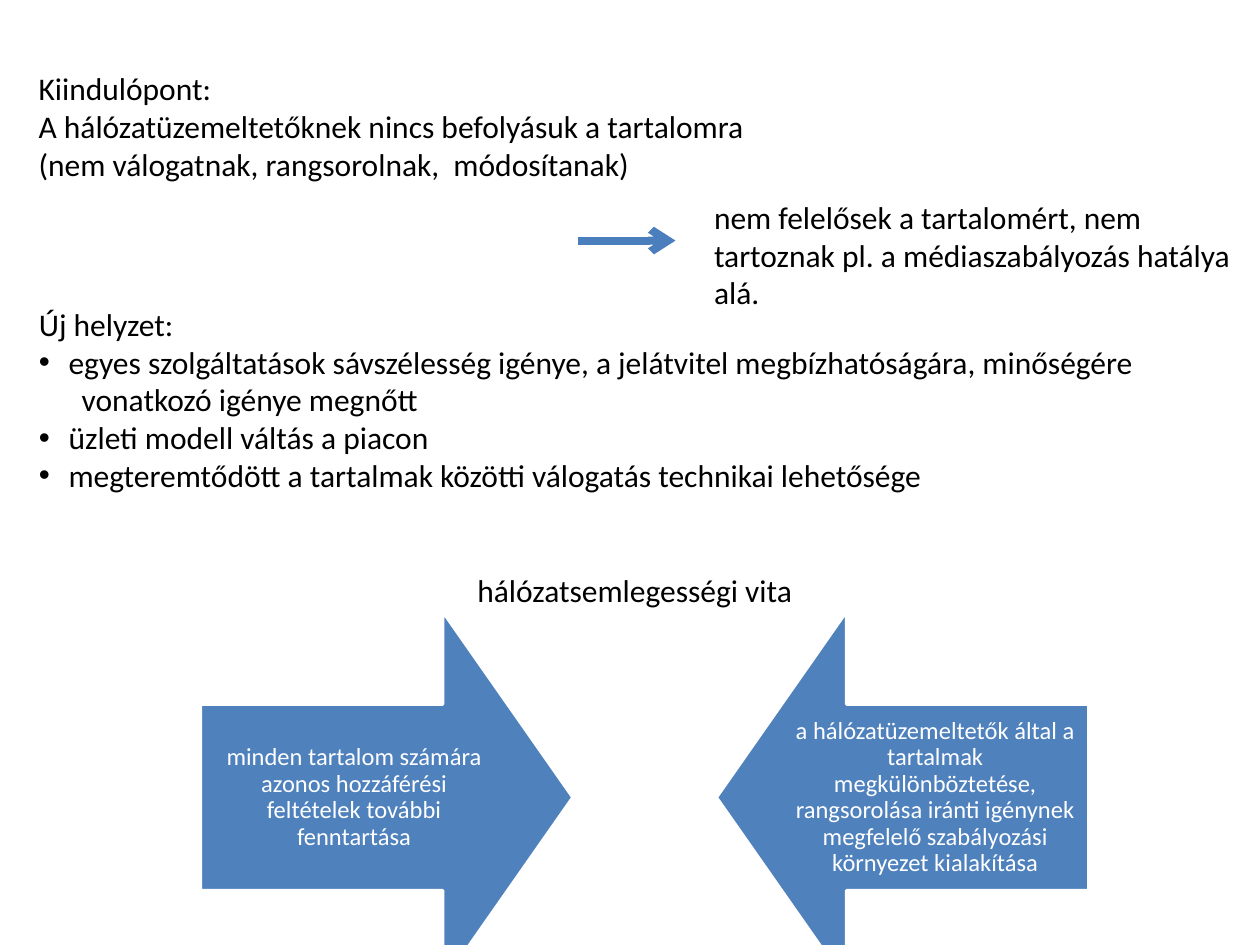
import pptx
import pptx.util
import pptx.dml.color
import pptx.enum.shapes
import pptx.enum.text
import pptx.oxml.ns
from lxml import etree

Pt = pptx.util.Pt
Kind = pptx.enum.shapes.MSO_SHAPE
Align = pptx.enum.text.PP_ALIGN
Mid = pptx.enum.text.MSO_ANCHOR.MIDDLE
qn = pptx.oxml.ns.qn

# Content
FONT = "Calibri"
HUES = {"text": "000000", "blue": "4F81BD", "link": "4B7EBC", "white": "FFFFFF"}
SLIDE = (720, 540)

# left, top, width, height, lines
NOTES = [
    (15, 36, 493, 73, ["Kiindulópont:",
                       "A hálózatüzemeltetőknek nincs befolyásuk a tartalomra",
                       "(nem válogatnak, rangsorolnak,  módosítanak)"]),
    (401, 109.5, 319, 73, ["nem felelősek a tartalomért, nem tartoznak pl. "
                           "a médiaszabályozás hatálya alá."]),
    (265.7, 323, 201, 29, ["hálózatsemlegességi vita"]),
]

# text, left margin, bullet
LIST_BOX = (15, 170.6, 660, 117)
LIST = [
    ("Új helyzet:", 0, False),
    ("egyes szolgáltatások sávszélesség igénye, a jelátvitel megbízhatóságára, "
     "minőségére", 17, True),
    ("vonatkozó igénye megnőtt", 24.5, False),
    ("üzleti modell váltás a piacon", 17, True),
    ("megteremtődött a tartalmak közötti válogatás technikai lehetősége", 17, True),
]

LINK = (330.5, 137.5, 386, 137.5)

SIDE, TOP = 213, 349.2
SIDES = [
    (Kind.RIGHT_ARROW, 114.5,
     "minden tartalom számára azonos hozzáférési feltételek további fenntartása"),
    (Kind.LEFT_ARROW, 409.3,
     "a hálózatüzemeltetők által a tartalmak megkülönböztetése, rangsorolása "
     "iránti igénynek megfelelő szabályozási környezet kialakítása"),
]


def tint(hue):
    return pptx.dml.color.RGBColor.from_string(HUES[hue])


def style(frame, size, hue):
    for para in frame.paragraphs:
        for run in para.runs:
            run.font.name = FONT
            run.font.size = Pt(size)
            run.font.color.rgb = tint(hue)


def place(shape, box):
    shape.left, shape.top, shape.width, shape.height = map(Pt, box)


def main():
    deck = pptx.Presentation()
    deck.slide_width, deck.slide_height = map(Pt, SLIDE)
    slide = deck.slides.add_slide(deck.slide_layouts[1])
    shapes = slide.shapes
    title = shapes.title
    title.element.getparent().remove(title.element)

    # Plain notes
    for *box, lines in NOTES:
        frame = shapes.add_textbox(*map(Pt, box)).text_frame
        frame.word_wrap = True
        frame.text = "\n".join(lines)
        style(frame, 18, "text")

    # Bulleted list
    body = slide.placeholders[1]
    place(body, LIST_BOX)
    frame = body.text_frame
    frame.auto_size = pptx.enum.text.MSO_AUTO_SIZE.NONE
    frame.text = "\n".join(text for text, *_ in LIST)
    for para, (_, left, dot) in zip(frame.paragraphs, LIST):
        para.space_before = Pt(0)
        props = para._p.get_or_add_pPr()
        props.set("marL", str(Pt(left)))
        props.set("indent", str(Pt(-left if dot else 0)))
        if dot:
            etree.SubElement(props, qn("a:buFont")).set("typeface", "Arial")
            etree.SubElement(props, qn("a:buChar")).set("char", "•")
        else:
            etree.SubElement(props, qn("a:buNone"))
    style(frame, 18, "text")

    # Arrow from premise to outcome
    link = shapes.add_connector(
        pptx.enum.shapes.MSO_CONNECTOR.STRAIGHT, *map(Pt, LINK))
    link.line.color.rgb = tint("link")
    link.line.width = Pt(4.5)
    etree.SubElement(link.line._get_or_add_ln(), qn("a:tailEnd")).set("type", "arrow")
    etree.SubElement(link._element.spPr, qn("a:effectLst"))

    # Opposing block arrows
    for kind, left, text in SIDES:
        block = shapes.add_shape(kind, *map(Pt, (left, TOP, SIDE, SIDE)))
        block.adjustments[0], block.adjustments[1] = 0.5, 0.35
        block.shadow.inherit = False
        block.fill.solid()
        block.fill.fore_color.rgb = tint("blue")
        block.line.color.rgb = tint("white")
        block.line.width = Pt(2)
        frame = block.text_frame
        frame.word_wrap = True
        frame.vertical_anchor = Mid
        frame.margin_left = frame.margin_right = Pt(8)
        frame.margin_top = frame.margin_bottom = Pt(8)
        frame.text = text
        frame.paragraphs[0].alignment = Align.CENTER
        frame.paragraphs[0].line_spacing = 0.9
        style(frame, 14, "white")

    deck.save("out.pptx")


if __name__ == "__main__":
    main()
